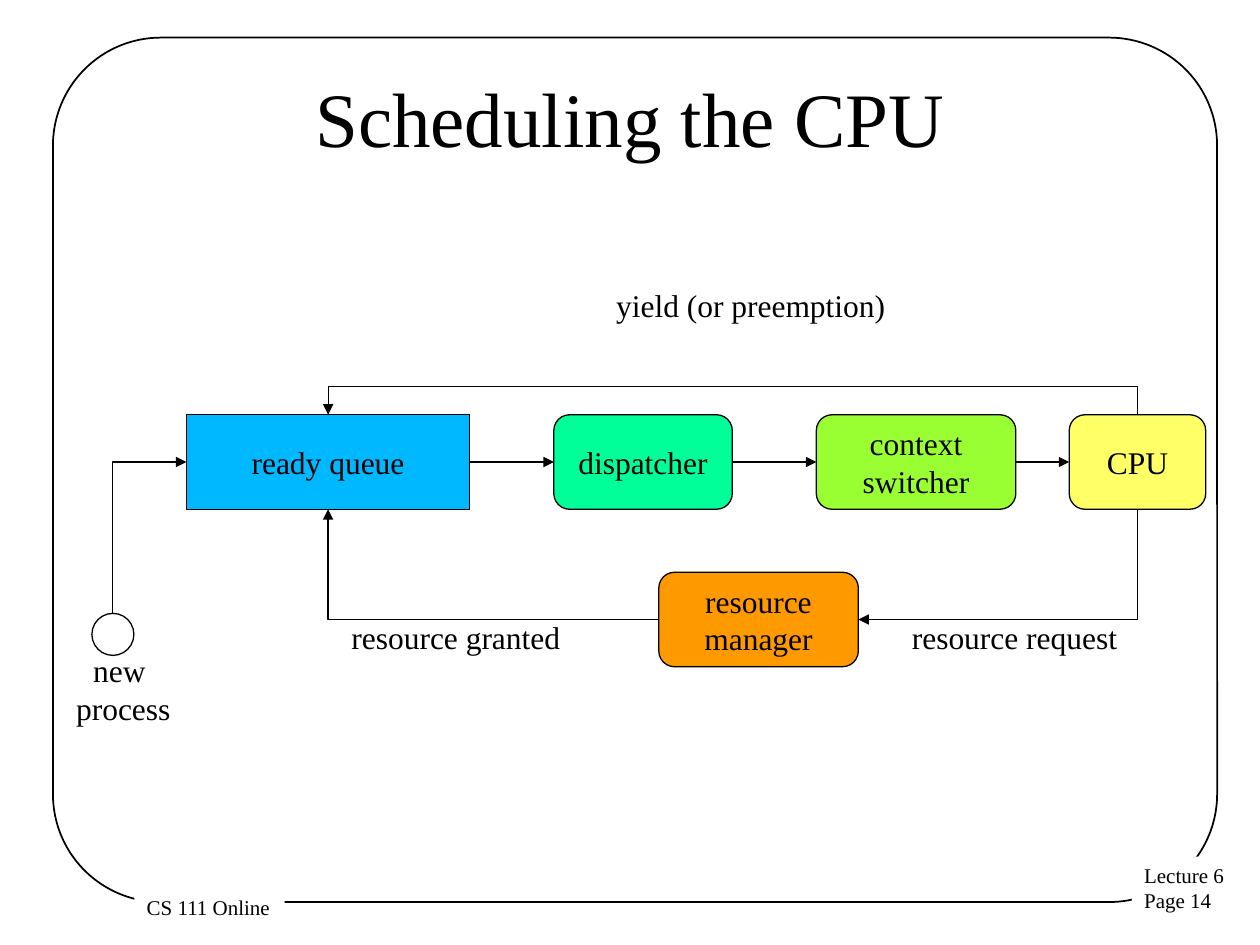
from lxml.etree import SubElement
from pptx import Presentation
from pptx.dml.color import RGBColor
from pptx.enum.shapes import MSO_CONNECTOR as Connector, MSO_SHAPE as Shape
from pptx.enum.text import MSO_ANCHOR as Anchor, MSO_AUTO_SIZE as AutoSize, PP_ALIGN as Align
from pptx.oxml.ns import qn
from pptx.util import Pt

FONT = "Times New Roman"
COLORS = {
    "ink": "000000",
    "paper": "FFFFFF",
    "queue": "00B8FF",
    "dispatcher": "00FF99",
    "switcher": "99FF33",
    "cpu": "FFFF66",
    "manager": "FF9900",
}
TOP, LEFT, BOTTOM, RIGHT = range(4)  # connection sites of a box
ROTATION = {"right": 0, "down": 90, "left": 180, "up": 270}
THIN = 0.75
FLAT = 0.125  # local width of an elbow whose ends are level


def color(name):
    return RGBColor.from_string(COLORS[name])


def write_text(frame, text, size=18, align=Align.LEFT, anchor=Anchor.TOP, wrap=False, grow=False):
    frame.word_wrap = wrap
    frame.auto_size = AutoSize.SHAPE_TO_FIT_TEXT if grow else AutoSize.NONE
    frame.vertical_anchor = anchor
    for index, line in enumerate(text.split("\n")):
        paragraph = frame.add_paragraph() if index else frame.paragraphs[0]
        paragraph.alignment = align
        run = paragraph.add_run()
        run.text = line
        run.font.name = FONT
        run.font.size = Pt(size)
        run.font.color.rgb = color("ink")


def add_outline(slide, kind, box, fill=None, line=THIN):
    shape = slide.shapes.add_shape(kind, *map(Pt, box))
    shape.shadow.inherit = False
    if fill:
        shape.fill.solid()
        shape.fill.fore_color.rgb = color(fill)
    else:
        shape.fill.background()
    if line:
        shape.line.color.rgb = color("ink")
        shape.line.width = Pt(line)
    else:
        shape.line.fill.background()
    return shape


def add_label(slide, text, box, **text_format):
    label = slide.shapes.add_textbox(*map(Pt, box))
    write_text(label.text_frame, text, grow=True, **text_format)
    return label


def add_arrow(slide, start, start_site, end, end_site, kind=Connector.STRAIGHT):
    arrow = slide.shapes.add_connector(kind, 0, 0, 0, 0)
    arrow.begin_connect(start, start_site)
    arrow.end_connect(end, end_site)
    arrow.line.color.rgb = color("ink")
    arrow.line.width = Pt(THIN)
    properties = arrow.element.spPr
    SubElement(properties.find(qn("a:ln")), qn("a:tailEnd"), type="triangle")
    SubElement(properties, qn("a:effectLst"))
    return arrow


def add_elbow(slide, start, start_site, end, end_site, first_leg, detour=None):
    """Bent arrow leaving in direction first_leg; detour is the rise of a three-part bend."""
    arrow = add_arrow(slide, start, start_site, end, end_site, Connector.ELBOW)
    center_x = (arrow.begin_x + arrow.end_x) // 2
    center_y = (arrow.begin_y + arrow.end_y) // 2
    width, height = abs(arrow.end_x - arrow.begin_x), abs(arrow.end_y - arrow.begin_y)
    if first_leg in ("up", "down"):
        width, height = height, width
    width = max(width, Pt(FLAT))

    transform = arrow.element.spPr.find(qn("a:xfrm"))
    for flip in ("flipH", "flipV"):
        transform.attrib.pop(flip, None)
    transform.set("rot", str(ROTATION[first_leg] * 60000))
    arrow.left, arrow.top = center_x - width // 2, center_y - height // 2
    arrow.width, arrow.height = width, height

    geometry = arrow.element.spPr.find(qn("a:prstGeom"))
    if detour:
        transform.set("flipV", "1")
        adjustment = int(detour / FLAT * 100000)
        SubElement(geometry.find(qn("a:avLst")), qn("a:gd"), name="adj1", fmla=f"val {adjustment}")
    else:
        geometry.set("prst", "bentConnector2")


def draw_frame(slide, box):
    left, top, width, height = box
    frame = add_outline(slide, Shape.ROUNDED_RECTANGLE, box, line=1)
    frame.adjustments[0] = 0.125
    footers = [
        ("Lecture 6\nPage 14", (left + 616.5, top + 468, 60.5, 36.7)),
        ("CS 111 Online", (left + 46.5, top + 486, 86, 21.8)),
    ]
    for text, footer_box in footers:
        footer = add_outline(slide, Shape.RECTANGLE, footer_box, fill="paper", line=None)
        write_text(footer.text_frame, text, size=12, grow=True)


def draw_title(slide, box):
    title = slide.shapes.title
    title.left, title.top, title.width, title.height = map(Pt, box)
    write_text(title.text_frame, "Scheduling the CPU", size=44, align=Align.CENTER,
               anchor=Anchor.MIDDLE, wrap=True)


def draw_scheduler(slide, box):
    left, top, _, _ = box
    rounded = Shape.FLOWCHART_ALTERNATE_PROCESS
    row, lower_row, stage_height = 78, 168, 54
    stages = [
        ("queue", "ready queue", Shape.RECTANGLE, 70.5, row, 162),
        ("dispatcher", "dispatcher", rounded, 280.5, row, 102),
        ("switcher", "context\nswitcher", rounded, 430.5, row, 114),
        ("cpu", "CPU", rounded, 575, row, 78),
        ("manager", "resource\nmanager", rounded, 340.5, lower_row, 114),
    ]
    nodes = {}
    for name, text, kind, x, y, width in stages:
        nodes[name] = add_outline(slide, kind, (left + x, top + y, width, stage_height), fill=name)
        write_text(nodes[name].text_frame, text, align=Align.CENTER, anchor=Anchor.MIDDLE)
    process = add_outline(slide, Shape.OVAL, (left + 16.5, top + 191.5, 24, 24))

    queue, dispatcher, switcher, cpu, manager = nodes.values()
    for start, end in ((queue, dispatcher), (dispatcher, switcher), (switcher, cpu)):
        add_arrow(slide, start, RIGHT, end, LEFT)
    add_elbow(slide, cpu, TOP, queue, TOP, "up", detour=18)
    add_elbow(slide, cpu, BOTTOM, manager, RIGHT, "down")
    add_elbow(slide, manager, LEFT, queue, BOTTOM, "left")
    add_elbow(slide, process, TOP, queue, LEFT, "up")

    labels = [
        ("yield (or preemption)", 309, 1, 171.5, 29, Align.LEFT),
        ("resource request", 478, 190.5, 133, 29, Align.LEFT),
        ("resource granted", 157.75, 190.5, 135.5, 29, Align.LEFT),
        ("new \nprocess", 0, 209.5, 69, 51, Align.CENTER),
    ]
    for text, x, y, width, height, align in labels:
        add_label(slide, text, (left + x, top + y, width, height), align=align)


def main():
    presentation = Presentation()
    presentation.slide_width, presentation.slide_height = Pt(720), Pt(540)
    slide = presentation.slides.add_slide(presentation.slide_layouts[5])
    draw_frame(slide, (30.25, 21.5, 665.25, 494))
    draw_title(slide, (36, 21.5, 648, 90))
    draw_scheduler(slide, (36, 159, 653, 261))
    presentation.save("out.pptx")


if __name__ == "__main__":
    main()
